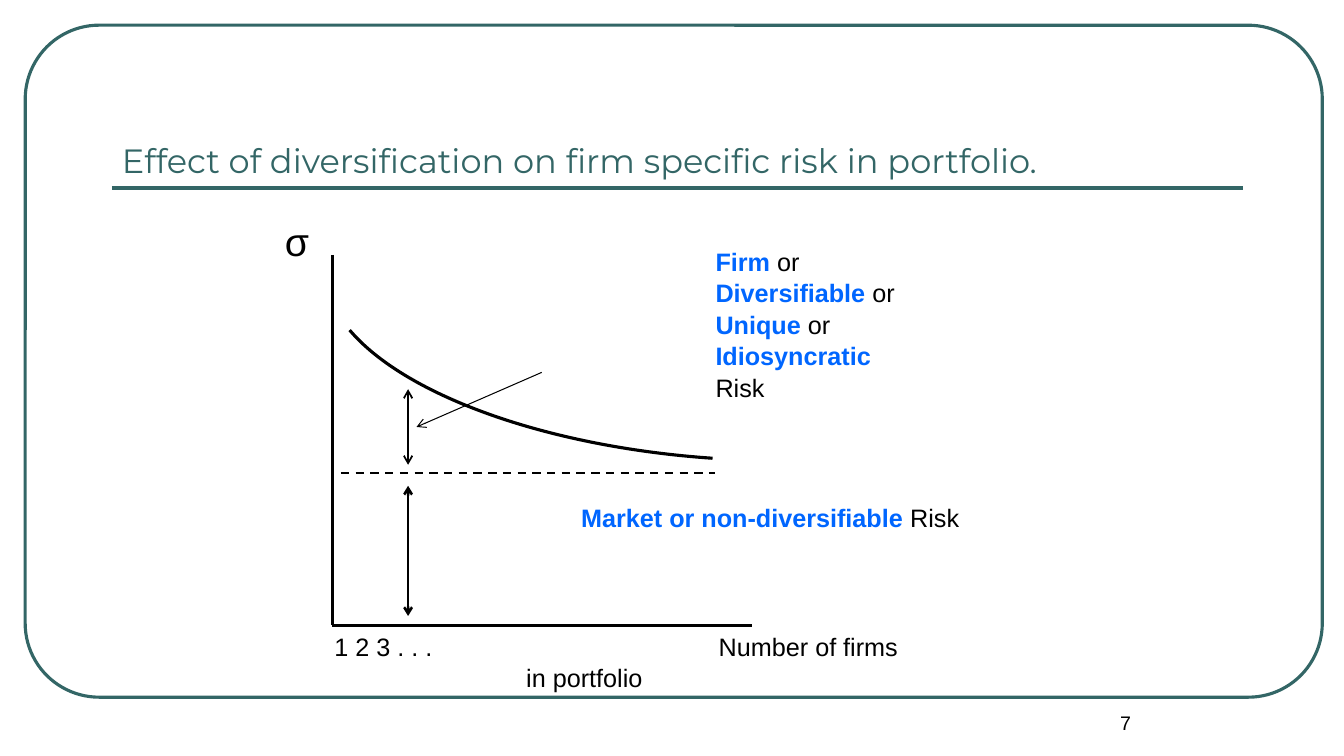
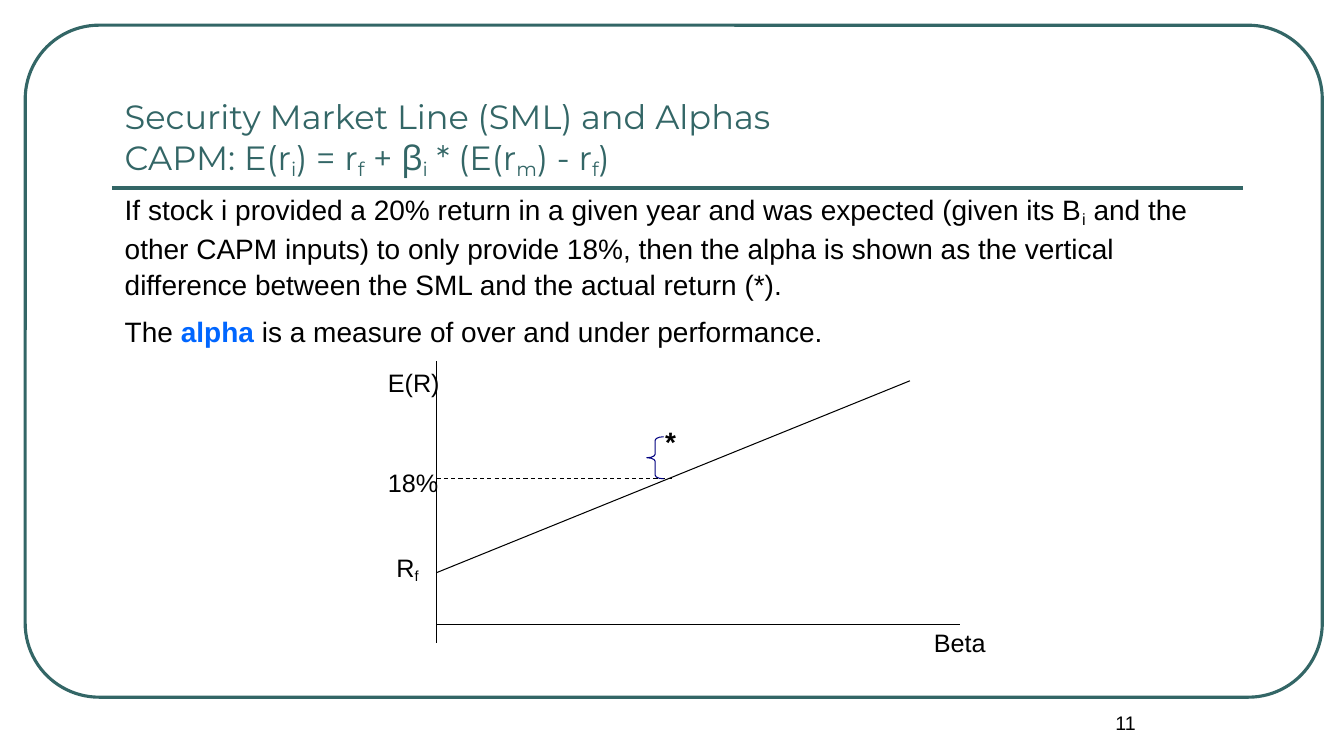
from pptx import Presentation
from pptx.dml.color import RGBColor
from pptx.enum.dml import MSO_LINE
from pptx.enum.shapes import MSO_CONNECTOR, MSO_SHAPE
from pptx.enum.text import MSO_ANCHOR, PP_ALIGN
from pptx.oxml.ns import qn
from pptx.util import Pt
from lxml.etree import SubElement

TEAL, BLACK, BLUE, NAVY = "336666", "000000", "0066FF", "000080"
PLAIN, KEY, SUB = "plain", "key", "sub"
hex_color = RGBColor.from_string


def write(slide, box, paragraphs, size=18, font="Arial", color=BLACK, bold=False,
          anchor=MSO_ANCHOR.TOP, align=PP_ALIGN.LEFT, spacing=1.0, gap=0):
    """Add a text box; each paragraph is a list of (text, style) runs."""
    frame = slide.shapes.add_textbox(*map(Pt, box)).text_frame
    frame.word_wrap = True
    frame.vertical_anchor = anchor
    for index, runs in enumerate(paragraphs):
        paragraph = frame.add_paragraph() if index else frame.paragraphs[0]
        paragraph.alignment = align
        paragraph.line_spacing = spacing
        if index and gap:
            paragraph.space_before = Pt(gap)
        for text, style in runs:
            run = paragraph.add_run()
            run.text = text
            run.font.name = font
            run.font.size = Pt(size)
            run.font.bold = bold or style == KEY
            run.font.color.rgb = hex_color(BLUE if style == KEY else color)
            if style == SUB:
                run._r.get_or_add_rPr().set("baseline", "-17000")
    return frame


def draw_line(slide, start, end, width=0.75, color=BLACK, dashed=False, arrows=()):
    """Add a line; arrows names the ends that carry one: headEnd, tailEnd."""
    connector = slide.shapes.add_connector(
        MSO_CONNECTOR.STRAIGHT, *map(Pt, (*start, *end)))
    connector.line.width = Pt(width)
    connector.line.color.rgb = hex_color(color)
    if dashed:
        connector.line.dash_style = MSO_LINE.DASH
    for arrow in arrows:
        SubElement(connector.line._get_or_add_ln(), qn(f"a:{arrow}"), type="arrow")
    SubElement(connector._element.spPr, qn("a:effectLst"))


prs = Presentation()
prs.slide_width, prs.slide_height = Pt(960), Pt(540)

# Frame, title, rule and page number of every slide
pages = [
    ("7", 80, [[("Effect of diversification on firm specific risk in portfolio.", PLAIN)]]),
    ("11", 82, [
        [("Security Market Line (SML) and Alphas", PLAIN)],
        [("CAPM: E(r", PLAIN), ("i", SUB), (") = r", PLAIN), ("f", SUB),
         (" + β", PLAIN), ("i", SUB), (" * (E(r", PLAIN), ("m", SUB),
         (") - r", PLAIN), ("f", SUB), (")", PLAIN)],
    ]),
]
for number, title_left, title in pages:
    slide = prs.slides.add_slide(prs.slide_layouts[6])
    border = slide.shapes.add_shape(
        MSO_SHAPE.ROUNDED_RECTANGLE, Pt(18), Pt(18), Pt(926.5), Pt(480))
    border.adjustments[0] = 0.11
    border.shadow.inherit = False
    border.fill.background()
    border.line.color.rgb = hex_color(TEAL)
    border.line.width = Pt(2.25)
    draw_line(slide, (80, 134.5), (888, 134.5), 3, TEAL)
    write(slide, (720, 504, 168, 36), [[(number, PLAIN)]], 14, align=PP_ALIGN.CENTER)
    write(slide, (title_left, 42, 806, 90), title, 24, "Montserrat", TEAL,
          anchor=MSO_ANCHOR.BOTTOM)

diversification, market_line = prs.slides

# Diversification: risk against number of firms
write(diversification, (504, 171.5, 325, 117), [
    [("Firm", KEY), (" or", PLAIN)],
    [("Diversifiable", KEY), (" or", PLAIN)],
    [("Unique", KEY), (" or", PLAIN)],
    [("Idiosyncratic", KEY)],
    [("Risk", PLAIN)],
], spacing=1.04)

origin = (237.5, 446.5)
both_ends = ("headEnd", "tailEnd")
draw_line(diversification, (origin[0], 182), origin, 2.25)
draw_line(diversification, origin, (537, origin[1]), 2.25)
draw_line(diversification, (243.5, 338), (510.5, 338), 1.5, dashed=True)
draw_line(diversification, (291.5, 278), (291.5, 332), 1.25, arrows=both_ends)
draw_line(diversification, (291.5, 347), (291.5, 440), 1.75, arrows=both_ends)
draw_line(diversification, (387, 266), (297.5, 305), arrows=("tailEnd",))

risk_curve = diversification.shapes.add_shape(
    MSO_SHAPE.ARC, Pt(231.8), Pt(93.6), Pt(570.2), Pt(234))
risk_curve.adjustments[0] = 162
risk_curve.adjustments[1] = 210.43
risk_curve.rotation = 183.9
risk_curve.shadow.inherit = False
risk_curve.fill.background()
risk_curve.line.color.rgb = hex_color(BLACK)
risk_curve.line.width = Pt(2.25)

write(diversification, (408, 355, 312, 29),
      [[("Market or non-diversifiable", KEY), (" Risk", PLAIN)]])
write(diversification, (196.5, 152, 41, 41), [[("σ", PLAIN)]], 28)
firms_axis = write(diversification, (231.8, 446.5, 444, 51), [
    [("1 2 3 . . .\tNumber of firms", PLAIN)],
    [("\tin portfolio", PLAIN)],
], spacing=1.04)
for paragraph, stop in zip(firms_axis.paragraphs, (274.5, 137)):
    tabs = SubElement(paragraph._p.get_or_add_pPr(), qn("a:tabLst"))
    SubElement(tabs, qn("a:tab"), pos=str(Pt(stop)), algn="l")

# Security market line and alpha
write(market_line, (82, 132.5, 806, 318), [
    [("If stock i provided a 20% return in a given year and was expected (given its B", PLAIN),
     ("i", SUB),
     (" and the other CAPM inputs) to only provide 18%, then the alpha is shown as the "
      "vertical difference between the SML and the actual return (*).", PLAIN)],
    [("The ", PLAIN), ("alpha", KEY),
     (" is a measure of over and under performance.", PLAIN)],
], 20, spacing=1.07, gap=8)

axis_x = 312
draw_line(market_line, (axis_x, 342), (480, 342), dashed=True)
draw_line(market_line, (axis_x, 258), (axis_x, 459))
draw_line(market_line, (axis_x, 446), (686, 446))
draw_line(market_line, (axis_x, 409), (650, 272))

for left, top, width, label in [
    (270, 258.5, 66, [("E(R)", PLAIN)]),
    (660, 444.5, 66, [("Beta", PLAIN)]),
    (276, 391, 36, [("R", PLAIN), ("f", SUB)]),
    (270, 330.5, 54, [("18%", PLAIN)]),
]:
    write(market_line, (left, top, width, 29), [label])
write(market_line, (468, 300, 22, 31), [[("*", PLAIN)]], 20, bold=True)

alpha_brace = market_line.shapes.add_shape(
    MSO_SHAPE.LEFT_BRACE, Pt(462), Pt(312), Pt(12), Pt(30))
alpha_brace.adjustments[0] = 0.21
alpha_brace.shadow.inherit = False
alpha_brace.fill.background()
alpha_brace.line.color.rgb = hex_color(NAVY)
alpha_brace.line.width = Pt(0.75)

prs.save("out.pptx")
